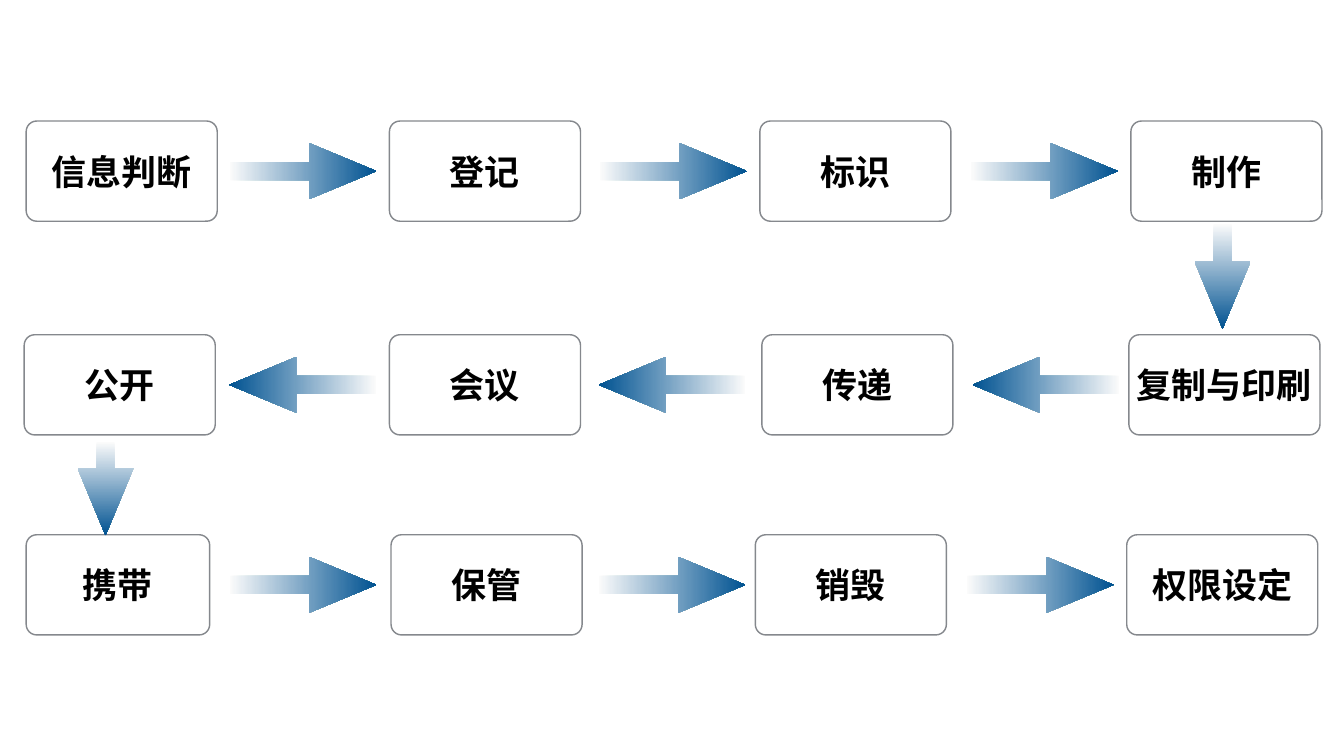
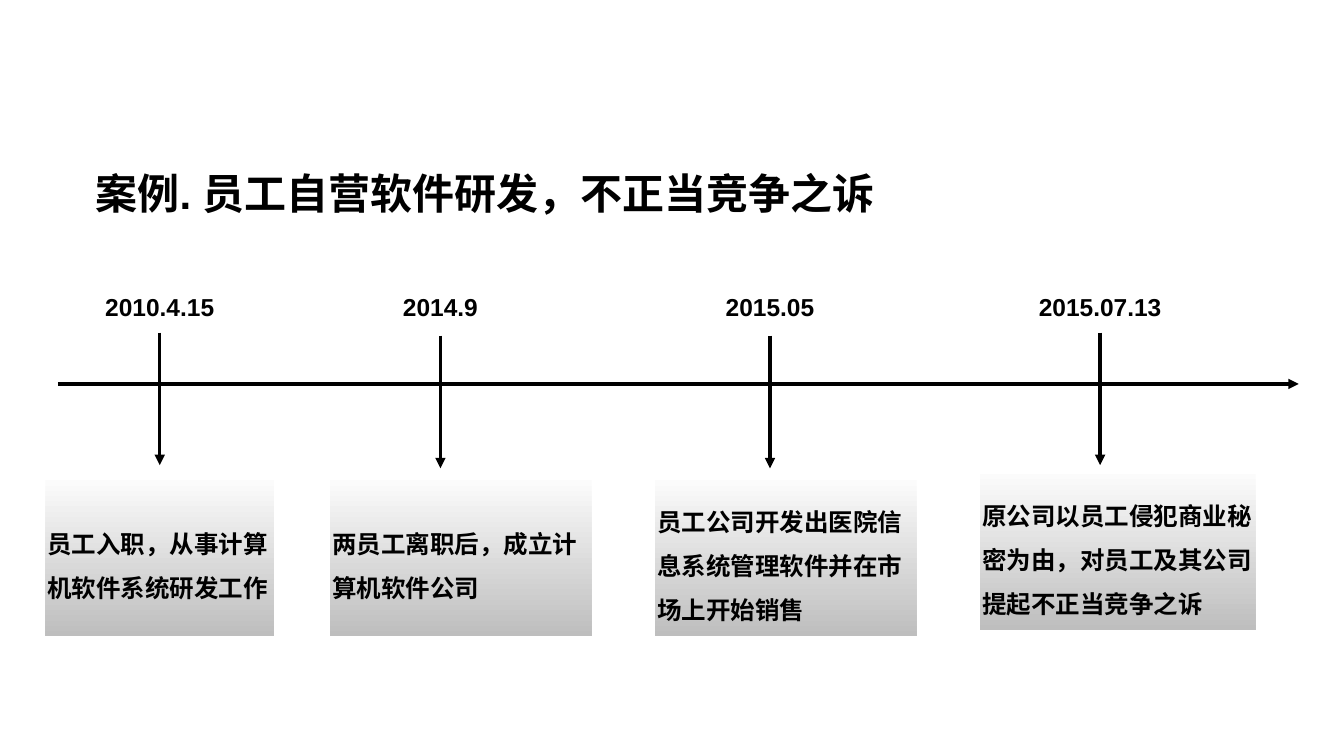
"""Builds a document-handling flow and a case timeline."""
from lxml import etree
from pptx import Presentation
from pptx.dml.color import RGBColor
from pptx.enum.shapes import MSO_CONNECTOR, MSO_SHAPE
from pptx.enum.text import MSO_ANCHOR, PP_ALIGN
from pptx.oxml.ns import qn
from pptx.util import Cm, Pt

ROUND, RECT = MSO_SHAPE.ROUNDED_RECTANGLE, MSO_SHAPE.RECTANGLE
ARROW, STRAIGHT = MSO_SHAPE.RIGHT_ARROW, MSO_CONNECTOR.STRAIGHT
LEFT, CENTER, MIDDLE = PP_ALIGN.LEFT, PP_ALIGN.CENTER, MSO_ANCHOR.MIDDLE

FONT = "Arial"
BLACK, GREY, PALE, BLUE, SILVER = "000000", "85888D", "FBFBFB", "005291", "BEBEBE"

STEP_W, STEP_H = 9.63, 5.05
ARROW_W, ARROW_H = 7.39, 2.82
ROWS = [
    {"top": 6.1, "back": False, "arrows": [11.58, 30.25, 48.95],
     "steps": [("信息判断", 1.32, STEP_W), ("登记", 19.63, STEP_W),
               ("标识", 38.3, STEP_W), ("制作", 57, STEP_W)]},
    {"top": 16.87, "back": True, "arrows": [11.56, 30.18, 49.02],
     "steps": [("公开", 1.22, STEP_W), ("会议", 19.63, STEP_W),
               ("传递", 38.4, STEP_W), ("复制与印刷", 56.9, STEP_W)]},
    {"top": 26.95, "back": False, "arrows": [11.58, 30.18, 48.74],
     "steps": [("携带", 1.32, 9.25), ("保管", 19.71, STEP_W),
               ("销毁", 38.07, STEP_W), ("权限设定", 56.79, STEP_W)]},
]
TURNS = [(61.62, 13.93, 5.28), (5.32, 24.63, 4.7)]

TITLE = "案例. 员工自营软件研发，不正当竞争之诉"
AXIS_Y, PIN_H, CARD_H = 19.35, 6.68, 7.85
EVENTS = [
    ("2010.4.15", 5.74, (8.05, 16.76), (2.29, 24.21, 11.53),
     "员工入职，从事计算机软件系统研发工作"),
    ("2014.9", 4.04, (22.2, 16.92), (16.64, 24.21, 13.18),
     "两员工离职后，成立计算机软件公司"),
    ("2015.05", 4.72, (38.81, 16.92), (33.02, 24.21, 13.18),
     "员工公司开发出医院信息系统管理软件并在市场上开始销售"),
    ("2015.07.13", 6.43, (55.45, 16.76), (49.4, 23.9, 13.89),
     "原公司以员工侵犯商业秘密为由，对员工及其公司提起不正当竞争之诉"),
]


def color(code):
    return RGBColor.from_string(code)


def write(shape, text, size, align, space=None, wrap=True):
    frame = shape.text_frame
    frame.word_wrap = wrap
    frame.vertical_anchor = MIDDLE
    frame.margin_left = frame.margin_right = Cm(0.1)
    frame.margin_top = frame.margin_bottom = Cm(0.1)
    para = frame.paragraphs[0]
    para.text = text
    para.alignment = align
    if space:
        para.line_spacing = space
    font = para.font
    font.name, font.size, font.bold = FONT, Pt(size), True
    font.color.rgb = color(BLACK)


def draw(slide, kind, *box):
    shape = slide.shapes.add_shape(kind, *map(Cm, box))
    shape.shadow.inherit = False
    return shape


def label(slide, *box):
    return slide.shapes.add_textbox(*map(Cm, box))


def blend(shape, end, angle):
    shape.line.fill.background()
    shape.fill.gradient()
    shape.fill.gradient_angle = angle
    for stop, code in zip(shape.fill.gradient_stops, (PALE, end)):
        stop.color.rgb = color(code)


def arrow(slide, mid_x, mid_y, length, flip=False, turn=0):
    shape = draw(slide, ARROW, mid_x - length / 2, mid_y - ARROW_H / 2,
                 length, ARROW_H)
    shape.adjustments[0], shape.adjustments[1] = 0.32, 1.2
    shape.rotation = turn
    if flip:
        shape._element.spPr.find(qn("a:xfrm")).set("flipH", "1")
    blend(shape, BLUE, 0)


def line(slide, *ends):
    link = slide.shapes.add_connector(STRAIGHT, *map(Cm, ends))
    link.line.width = Pt(5)
    link.line.color.rgb = color(BLACK)
    props = link._element.spPr
    etree.SubElement(props.find(qn("a:ln")), qn("a:tailEnd"), type="triangle")
    etree.SubElement(props, qn("a:effectLst"))


def flow(slide):
    for row in ROWS:
        for text, left, width in row["steps"]:
            step = draw(slide, ROUND, left, row["top"], width, STEP_H)
            step.adjustments[0] = 0.105
            step.fill.background()
            step.line.width = Pt(2)
            step.line.color.rgb = color(GREY)
            write(step, text, 50, CENTER)
        for left in row["arrows"]:
            arrow(slide, left + ARROW_W / 2, row["top"] + STEP_H / 2,
                  ARROW_W, row["back"])
    for mid_x, mid_y, length in TURNS:
        arrow(slide, mid_x, mid_y, length, True, 270)


def story(slide):
    line(slide, 2.92, AXIS_Y, 65.46, AXIS_Y)
    for date, wide, (pin_x, pin_y), (left, top, width), text in EVENTS:
        write(label(slide, pin_x - wide / 2, 14.6, wide, 1.7),
              date, 35, CENTER, wrap=False)
        card = draw(slide, RECT, left, top, width, CARD_H)
        blend(card, SILVER, 270)
        write(card, text, 35, LEFT, 1.5)
        line(slide, pin_x, pin_y, pin_x, pin_y + PIN_H)
    write(label(slide, 4.72, 7.09, 40.13, 3.18), TITLE, 60, LEFT, 1.8)


def main():
    deck = Presentation()
    deck.slide_width, deck.slide_height = Cm(67.74), Cm(38.1)
    for build in (flow, story):
        build(deck.slides.add_slide(deck.slide_layouts[6]))
    deck.save("out.pptx")


if __name__ == "__main__":
    main()
